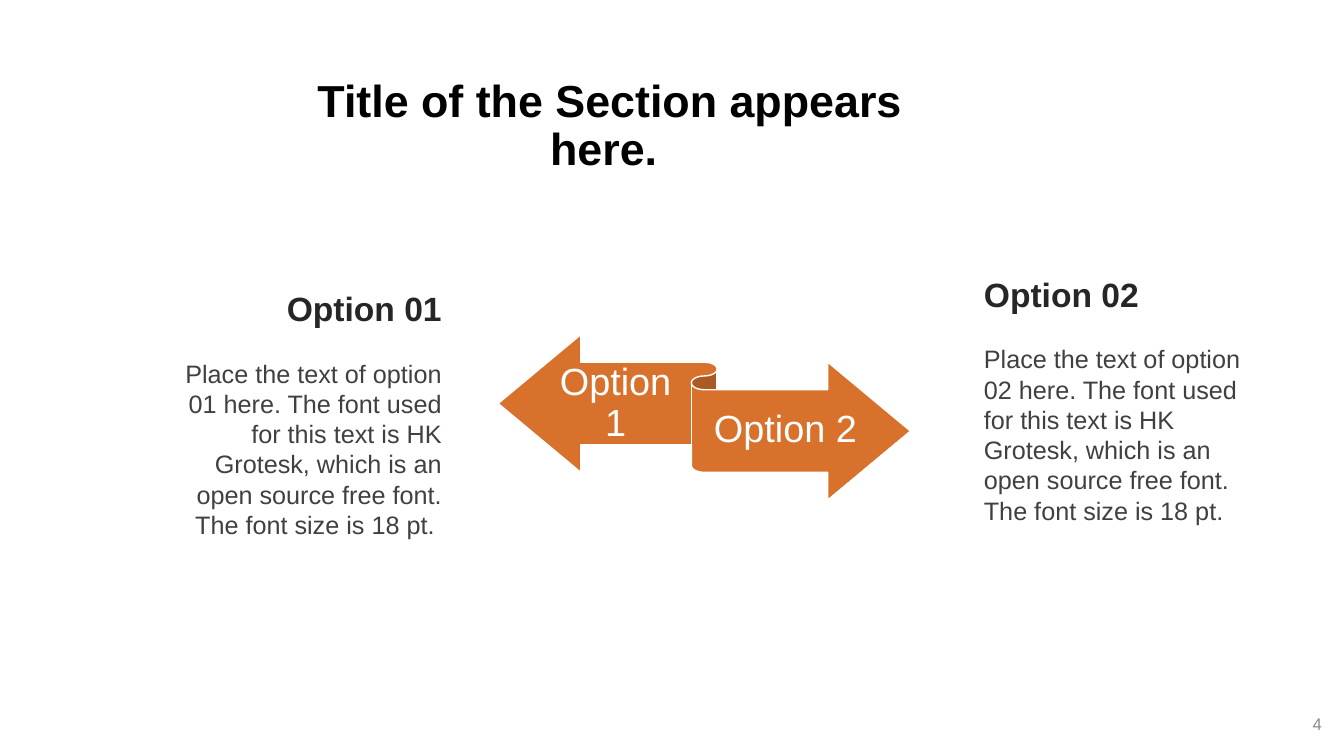
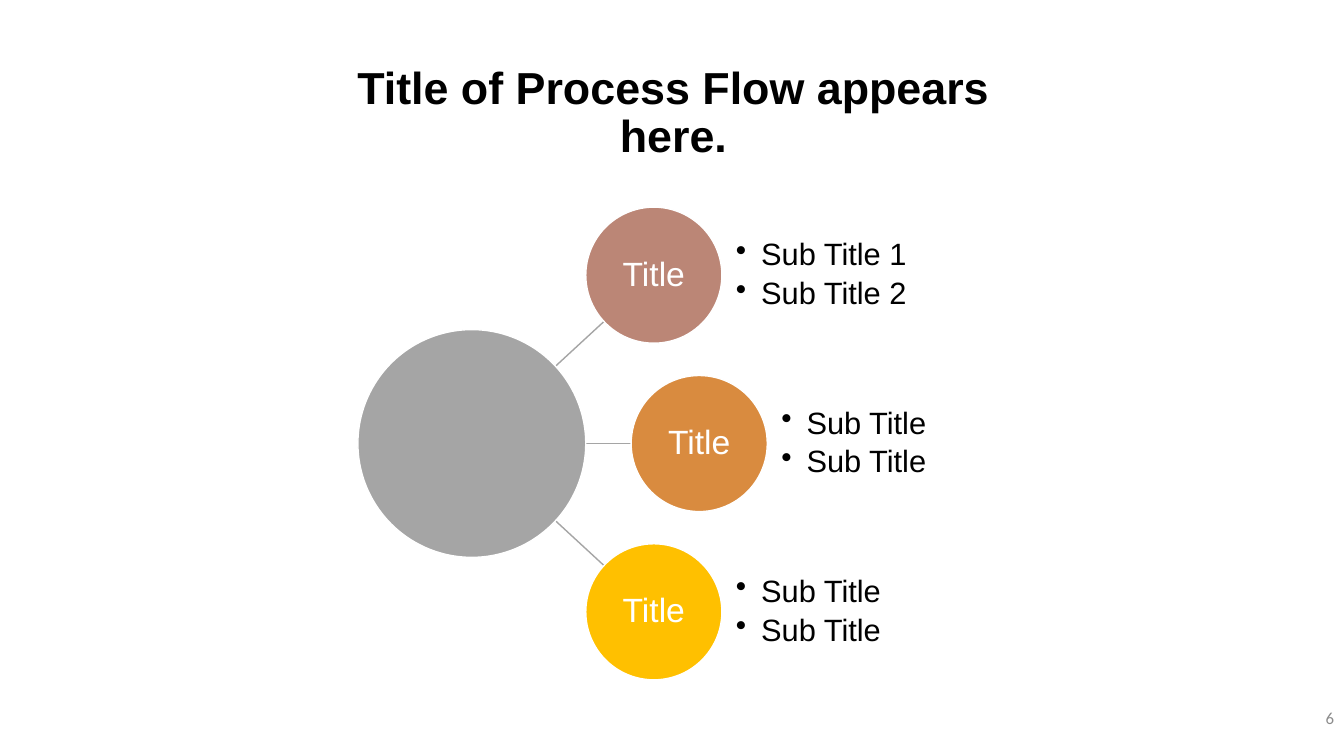
from pptx import Presentation
from pptx.dml.color import RGBColor
from pptx.enum.shapes import MSO_CONNECTOR, MSO_SHAPE
from pptx.enum.text import MSO_ANCHOR as ANCHOR, MSO_AUTO_SIZE, PP_ALIGN as ALIGN
from pptx.oxml.ns import qn
from pptx.util import Inches, Pt
from lxml.etree import SubElement

# Shared colours
WHITE = RGBColor(0xFF, 0xFF, 0xFF)
BLACK = RGBColor(0x00, 0x00, 0x00)
HEADING = RGBColor(0x26, 0x26, 0x26)
BODY = RGBColor(0x40, 0x40, 0x40)
PAGE_GREY = RGBColor(0x8C, 0x8C, 0x8C)
GREY = RGBColor(0xA5, 0xA5, 0xA5)
ORANGE = RGBColor(0xD7, 0x71, 0x2C)
ROSE = RGBColor(0xBB, 0x86, 0x76)
AMBER = RGBColor(0xD9, 0x8B, 0x3F)
YELLOW = RGBColor(0xFF, 0xC0, 0x00)

# Shared text formats
TITLE = dict(size=Pt(32), bold=True, color=BLACK)
OPTION_HEAD = dict(size=Pt(24), bold=True, color=HEADING)
OPTION_BODY = dict(size=Pt(18), color=BODY)
RIBBON_LABEL = dict(size=Pt(27), color=WHITE)
CIRCLE_LABEL = dict(size=Pt(24), color=WHITE)
SUBTITLE = dict(size=Pt(22), color=BLACK)


def write(shape, lines, align=ALIGN.LEFT, anchor=ANCHOR.TOP, margins=(0.1, 0.05, 0.1, 0.05),
          spacing=1.0, before=0, after=0, bullet=False, font="Arial"):
    """Fill a shape with (text, format) lines; margins run left, top, right, bottom."""
    frame = shape.text_frame
    frame.word_wrap = True
    frame.auto_size = MSO_AUTO_SIZE.NONE
    frame.vertical_anchor = anchor
    for side, margin in zip(("left", "top", "right", "bottom"), margins):
        setattr(frame, "margin_" + side, Inches(margin))
    for index, (text, style) in enumerate(lines):
        paragraph = frame.paragraphs[0] if index == 0 else frame.add_paragraph()
        paragraph.alignment = align
        paragraph.line_spacing = spacing
        paragraph.space_before = Pt(before if index else 0)
        paragraph.space_after = Pt(after)
        if bullet:
            properties = paragraph._p.get_or_add_pPr()
            properties.set("marL", str(Inches(0.25)))
            properties.set("indent", str(-Inches(0.25)))
            SubElement(properties, qn("a:buChar")).set("char", "•")
        run = paragraph.add_run()
        run.text = text
        run.font.name = font
        for name, value in style.items():
            if name == "color":
                run.font.color.rgb = value
            else:
                setattr(run.font, name, value)


def add_filled(slide, kind, box, colour):
    """Add a filled shape with a white outline."""
    shape = slide.shapes.add_shape(kind, *map(Inches, box))
    shape.shadow.inherit = False
    shape.fill.solid()
    shape.fill.fore_color.rgb = colour
    shape.line.color.rgb = WHITE
    shape.line.width = Pt(1)
    return shape


deck = Presentation()
deck.slide_width, deck.slide_height = Inches(13.33), Inches(7.5)

# Titles and page numbers
slides = []
for title, (left, top), page, (page_left, page_top), page_font in (
    ("Title of the Section appears here. ", (2.65, 0.73), "4", (10.21, 6.98), "Arial"),
    ("Title of Process Flow appears here.", (3.28, 0.6), "6", (10.33, 6.92), "Calibri"),
):
    slide = deck.slides.add_slide(deck.slide_layouts[5])
    heading = slide.shapes.title
    heading.left, heading.top = Inches(left), Inches(top)
    heading.width, heading.height = Inches(6.8), Inches(1.07)
    write(heading, [(title, TITLE)], ALIGN.CENTER, spacing=0.9)
    number = slide.shapes.add_textbox(Inches(page_left), Inches(page_top), Inches(3), Inches(0.4))
    write(number, [(page, dict(size=Pt(12), color=PAGE_GREY))], ALIGN.RIGHT, ANCHOR.MIDDLE,
          font=page_font)
    slides.append(slide)
options, process = slides

# Slide 1: two-way ribbon and its labels
add_filled(options, MSO_SHAPE.LEFT_RIGHT_RIBBON, (4.94, 3.32, 4.09, 1.64), ORANGE)
for text, box in (("Option 1", (5.43, 3.61, 1.35, 0.8)), ("Option 2", (6.99, 3.87, 1.6, 0.8))):
    label = options.shapes.add_textbox(*map(Inches, box))
    write(label, [(text, RIBBON_LABEL)], ALIGN.CENTER, ANCHOR.MIDDLE, (0, 0.1, 0, 0.11), 0.9)

# Slide 1: option descriptions
for number, end, box, align in (
    ("01", " ", (1.43, 2.81, 3.05, 2.93), ALIGN.RIGHT),
    ("02", "", (9.66, 2.67, 2.95, 2.93), ALIGN.LEFT),
):
    description = options.shapes.add_textbox(*map(Inches, box))
    body = (f"Place the text of option {number} here. The font used for this text is HK Grotesk, "
            f"which is an open source free font. The font size is 18 pt.{end}")
    write(description, [(f"Option {number}", OPTION_HEAD), (body, OPTION_BODY)], align, before=21)

# Slide 2: spokes from the hub to each step
HUB_Y, STEP_PITCH, STEP_SIZE = 4.4, 1.67, 1.35
for start_dy, end_x, end_dy in ((-0.73, 5.99, -1.21), (0, 6.26, 0), (0.73, 5.99, 1.21)):
    spoke = process.shapes.add_connector(
        MSO_CONNECTOR.STRAIGHT, Inches(5.47), Inches(HUB_Y + start_dy),
        Inches(end_x), Inches(HUB_Y + end_dy))
    spoke.line.color.rgb = GREY
    spoke.line.width = Pt(1)
    SubElement(spoke._element.spPr, qn("a:effectLst"))

# Slide 2: hub, step circles and their subtitles
add_filled(process, MSO_SHAPE.OVAL, (3.55, 3.27, 2.26, 2.26), GREY)
for index, (left, colour, subtitles) in enumerate((
    (5.81, ROSE, ("Sub Title 1", "Sub Title 2")),
    (6.26, AMBER, ("Sub Title", "Sub Title")),
    (5.81, YELLOW, ("Sub Title", "Sub Title")),
)):
    top = HUB_Y + (index - 1) * STEP_PITCH - STEP_SIZE / 2
    step = add_filled(process, MSO_SHAPE.OVAL, (left, top, STEP_SIZE, STEP_SIZE), colour)
    write(step, [("Title", CIRCLE_LABEL)], ALIGN.CENTER, ANCHOR.MIDDLE, (0.02,) * 4, 0.9)
    details = process.shapes.add_textbox(
        Inches(left + 1.49), Inches(top), Inches(2.03), Inches(STEP_SIZE))
    write(details, [(text, SUBTITLE) for text in subtitles], anchor=ANCHOR.MIDDLE,
          margins=(0,) * 4, spacing=0.9, after=4, bullet=True)

deck.save("out.pptx")
